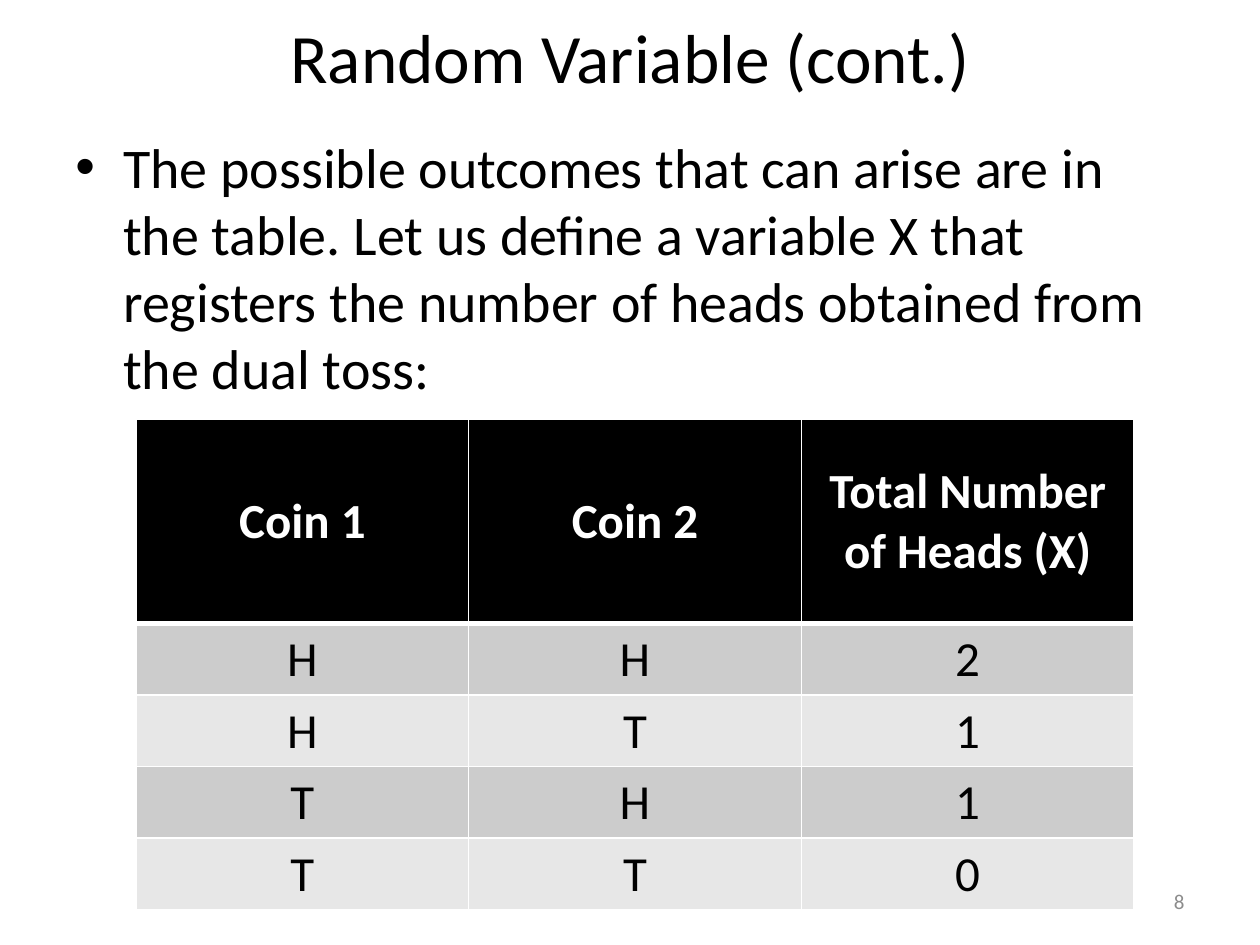
import dataclasses

import lxml.etree
import pptx
import pptx.dml.color
import pptx.enum.text
import pptx.oxml.ns
import pptx.util

Inches = pptx.util.Inches
Pt = pptx.util.Pt
ALIGN = pptx.enum.text.PP_ALIGN
ANCHOR = pptx.enum.text.MSO_ANCHOR
qn = pptx.oxml.ns.qn


@dataclasses.dataclass(frozen=True)
class Theme:
    font: str = "Calibri"
    black: str = "000000"
    white: str = "FFFFFF"
    muted: str = "8C8C8C"
    bands: tuple = ("CCCCCC", "E7E7E7")
    title: float = 39.6
    body: float = 32
    cell: float = 28
    number: float = 12


THEME = Theme()
OUTCOMES = [
    ("Coin 1", "Coin 2", "Total Number of Heads (X)"),
    ("H", "H", "2"),
    ("H", "T", "1"),
    ("T", "H", "1"),
    ("T", "T", "0"),
]


def rgb(color):
    return pptx.dml.color.RGBColor.from_string(color)


def write(tf, text, size, color, align, bold=False):
    tf.text = text
    p = tf.paragraphs[0]
    p.alignment = align
    font = p.runs[0].font
    font.name = THEME.font
    font.size = Pt(size)
    font.bold = bold
    font.color.rgb = rgb(color)
    return p


def add_text(s, box, text, size, color, align, anchor=ANCHOR.MIDDLE):
    tf = s.shapes.add_textbox(*map(Inches, box)).text_frame
    tf.word_wrap = True
    tf.vertical_anchor = anchor
    return write(tf, text, size, color, align)


def add_bullet(p, indent):
    pPr = p._p.get_or_add_pPr()
    pPr.set("marL", str(Inches(indent)))
    pPr.set("indent", str(-Inches(indent)))
    lxml.etree.SubElement(pPr, qn("a:buFont"), typeface="Arial")
    lxml.etree.SubElement(pPr, qn("a:buChar"), char="•")


def set_borders(cell, widths):
    tcPr = cell._tc.get_or_add_tcPr()
    for side, width in zip("LRTB", widths):
        ln = lxml.etree.SubElement(tcPr, qn(f"a:ln{side}"), w=str(Pt(width)))
        fill = lxml.etree.SubElement(ln, qn("a:solidFill"))
        lxml.etree.SubElement(fill, qn("a:srgbClr"), val=THEME.white)


def add_outcome_table(s, box, rows, header_height, row_height):
    shape = s.shapes.add_table(len(rows), len(rows[0]), *map(Inches, box))
    table = shape.table
    for i, values in enumerate(rows):
        header = i == 0
        table.rows[i].height = Inches(header_height if header else row_height)
        fill = THEME.black if header else THEME.bands[(i - 1) % 2]
        color = THEME.white if header else THEME.black
        widths = (1, 1, 3 if i == 1 else 1, 3 if header else 1)
        for j, value in enumerate(values):
            cell = table.cell(i, j)
            set_borders(cell, widths)
            cell.fill.solid()
            cell.fill.fore_color.rgb = rgb(fill)
            cell.vertical_anchor = ANCHOR.MIDDLE
            write(cell.text_frame, value, THEME.cell, color, ALIGN.CENTER, header)


def main():
    prs = pptx.Presentation()
    prs.slide_width, prs.slide_height = Inches(10), Inches(7.5)
    s = prs.slides.add_slide(prs.slide_layouts[6])
    add_text(s, (0.5, 0.3, 9, 0.28), "Random Variable (cont.)",
             THEME.title, THEME.black, ALIGN.CENTER)
    p = add_text(s, (0.5, 1, 9, 5.7),
                 "The possible outcomes that can arise are in the table. "
                 "Let us define a variable X that registers the number of "
                 "heads obtained from the dual toss:",
                 THEME.body, THEME.black, ALIGN.LEFT, ANCHOR.TOP)
    p.space_before = Pt(THEME.body * 0.2)
    add_bullet(p, 0.38)
    add_outcome_table(s, (1.08, 3.33, 7.92, 3.78), OUTCOMES, 1.62, 0.54)
    add_text(s, (7.17, 6.95, 2.33, 0.4), "8",
             THEME.number, THEME.muted, ALIGN.RIGHT)
    prs.save("out.pptx")


if __name__ == "__main__":
    main()
